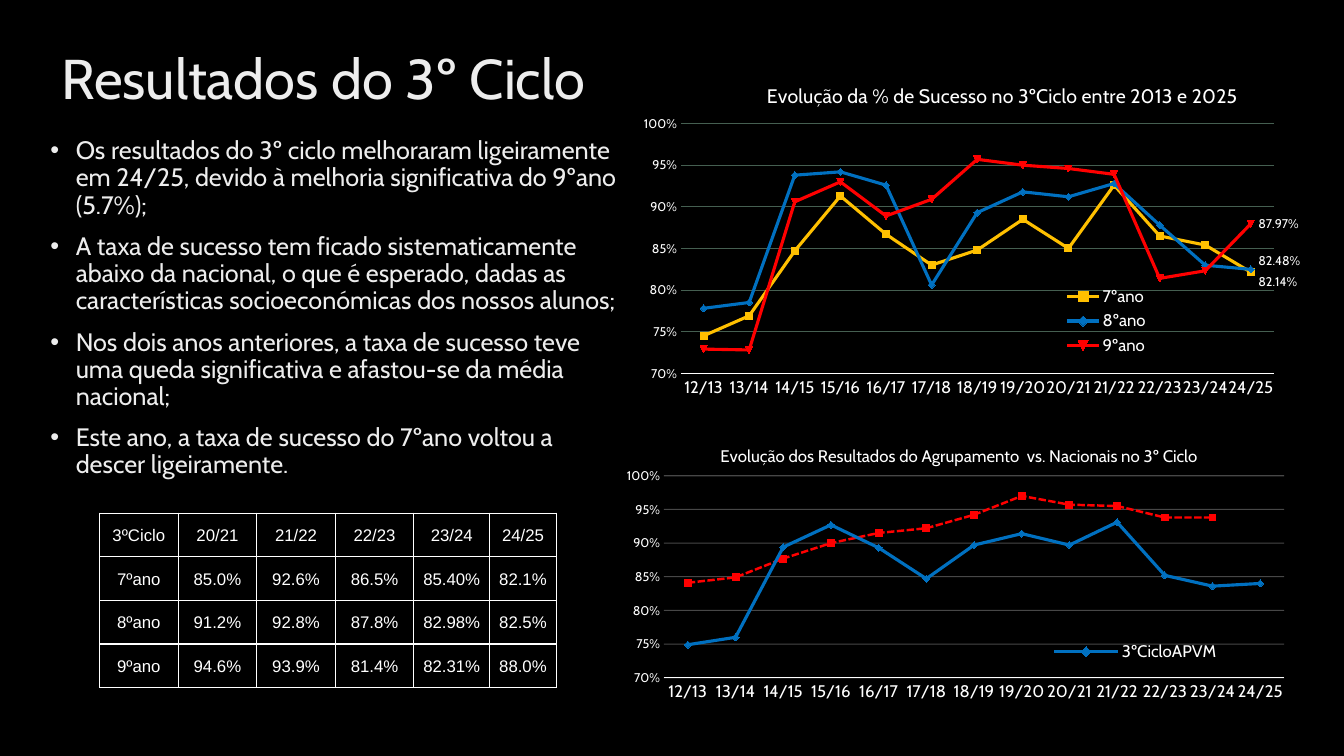
from lxml import etree
from pptx import Presentation
from pptx.chart.data import CategoryChartData
from pptx.dml.color import RGBColor
from pptx.enum.chart import XL_CHART_TYPE, XL_LABEL_POSITION, XL_LEGEND_POSITION, XL_TICK_MARK
from pptx.enum.dml import MSO_LINE
from pptx.enum.text import MSO_ANCHOR, PP_ALIGN
from pptx.oxml import parse_xml
from pptx.oxml.ns import nsdecls, qn
from pptx.util import Cm, Pt

LINE_CHART = XL_CHART_TYPE.LINE
NO_TICK = XL_TICK_MARK.NONE
LABEL_RIGHT = XL_LABEL_POSITION.RIGHT
DASH, SOLID = MSO_LINE.SQUARE_DOT, MSO_LINE.SOLID
MIDDLE, CENTER = MSO_ANCHOR.MIDDLE, PP_ALIGN.CENTER
WHITE, TEXT = "FFFFFF", "EDEDED"
YELLOW, BLUE, RED = "FFC000", "0070C0", "FF0000"
FONT = "Cabin"

# Content
TITLE = "Resultados do 3º Ciclo"
BULLETS = [
    "Os resultados do 3º ciclo melhoraram ligeiramente em 24/25, devido à melhoria "
    "significativa do 9ºano (5.7%);",
    "A taxa de sucesso tem ficado sistematicamente abaixo da nacional, o que é esperado, "
    "dadas as características socioeconómicas dos nossos alunos;",
    "Nos dois anos anteriores, a taxa de sucesso teve uma queda significativa e "
    "afastou-se da média nacional;",
    "Este ano, a taxa de sucesso do 7ºano voltou a descer ligeiramente.",
]
TABLE = [
    ["3ºCiclo", "20/21", "21/22", "22/23", "23/24", "24/25"],
    ["7ºano", "85.0%", "92.6%", "86.5%", "85.40%", "82.1%"],
    ["8ºano", "91.2%", "92.8%", "87.8%", "82.98%", "82.5%"],
    ["9ºano", "94.6%", "93.9%", "81.4%", "82.31%", "88.0%"],
]
COLUMNS = [1.98, 1.98, 1.98, 1.98, 1.91, 1.68]
ROW_HEIGHT = 1.1
YEARS = [f"{y}/{y + 1}" for y in range(12, 25)]

# Series: name, colour, width, dash, vertical shift of the end label (None: no label), values
# Layouts are fractions of the chart: x, y and, where needed, width and height
CHARTS = [
    {
        "box": (15.88, 1.55, 16.89, 8.84),
        "title": "Evolução da % de Sucesso no 3ºCiclo entre 2013 e 2025",
        "title_size": 14, "title_at": (0.2, 0.05),
        "plot": (0.076, 0.177, 0.89, 0.712),
        "legend": (0.64, 0.63, 0.15, 0.22), "hidden_entries": [],
        "grid": ("455F51", 100),
        "series": [
            ("7ºano", YELLOW, 2.25, SOLID, 0.026,
             [0.745, 0.769, 0.847, 0.913, 0.867, 0.83, 0.848, 0.885, 0.85, 0.926, 0.865,
              0.854, 0.8214]),
            ("8ºano", BLUE, 2.25, SOLID, -0.026,
             [0.778, 0.785, 0.938, 0.942, 0.926, 0.806, 0.893, 0.918, 0.912, 0.928, 0.878,
              0.8298, 0.8248]),
            ("9ºano", RED, 2.25, SOLID, 0,
             [0.729, 0.728, 0.906, 0.93, 0.889, 0.909, 0.957, 0.95, 0.946, 0.939, 0.814,
              0.8231, 0.8797]),
        ],
    },
    {
        "box": (15.49, 10.77, 17.27, 7.39),
        "title": "Evolução dos Resultados do Agrupamento  vs. Nacionais no 3º Ciclo",
        "title_size": 12, "title_at": (0.15, 0.05),
        "plot": (0.072, 0.165, 0.905, 0.689),
        "legend": (0.63, 0.72, 0.26, 0.09), "hidden_entries": [0],
        "grid": ("D9D9D9", 33),
        "series": [
            ("3ºCicloNAC", RED, 1.75, DASH, None,
             [0.841, 0.849, 0.877, 0.9, 0.915, 0.922, 0.942, 0.97, 0.957, 0.955, 0.938,
              0.938, None]),
            ("3ºCicloAPVM", BLUE, 2.25, SOLID, None,
             [0.749, 0.76, 0.894, 0.927, 0.893, 0.847, 0.897, 0.914, 0.897, 0.931, 0.852,
              0.836, 0.84]),
        ],
    },
]


def rgb(color):
    return RGBColor.from_string(color)


def set_font(font, size, color=WHITE, name=FONT):
    font.size, font.name, font.bold = Pt(size), name, False
    font.color.rgb = rgb(color)


def set_line(line, color, width):
    line.color.rgb = rgb(color)
    line.width = Pt(width)


def set_layout(parent, index, values, inner=False, edge=True):
    for old in parent.findall(qn("c:layout")):
        parent.remove(old)
    tags = '<c:layoutTarget val="inner"/>' if inner else ""
    if edge:
        tags += '<c:xMode val="edge"/><c:yMode val="edge"/>'
    tags += "".join(f'<c:{k} val="{v}"/>' for k, v in zip("xywh", values))
    parent.insert(index, parse_xml(
        f'<c:layout {nsdecls("c")}><c:manualLayout>{tags}</c:manualLayout></c:layout>'))


def add_text(box, paragraphs, size, bullet=False, anchor=None):
    tf = slide.shapes.add_textbox(*map(Cm, box)).text_frame
    tf.word_wrap = True
    if anchor is not None:
        tf.vertical_anchor = anchor
    for i, text in enumerate(paragraphs):
        p = tf.add_paragraph() if i else tf.paragraphs[0]
        p.text = text
        p.line_spacing = 0.9
        p.space_before = Pt(10 if i else 0)
        if bullet:
            pPr = p._p.get_or_add_pPr()
            pPr.set("marL", str(Cm(0.64)))
            pPr.set("indent", str(-Cm(0.64)))
            etree.SubElement(pPr, qn("a:buFont")).set("typeface", "Arial")
            etree.SubElement(pPr, qn("a:buChar")).set("char", "•")
        set_font(p.runs[0].font, size, TEXT)


def add_line_chart(c):
    data = CategoryChartData(number_format="0.00%")
    data.categories = YEARS
    for name, *_, values in c["series"]:
        data.add_series(name, values)
    chart = slide.shapes.add_chart(LINE_CHART, *map(Cm, c["box"]), data).chart
    set_font(chart.font, 10)
    chart.plots[0].vary_by_categories = False

    # Title, plot area and legend
    tf = chart.chart_title.text_frame
    tf.text = c["title"]
    set_font(tf.paragraphs[0].runs[0].font, c["title_size"])
    chart.has_legend = True
    legend = chart.legend
    legend.position = XL_LEGEND_POSITION.RIGHT
    legend.include_in_layout = False
    set_font(legend.font, 12)
    root = chart._chartSpace
    set_layout(root.xpath(".//c:title")[0], 1, c["title_at"])
    set_layout(root.xpath(".//c:plotArea")[0], 0, c["plot"], inner=True)
    legend_xml = root.xpath(".//c:legend")[0]
    set_layout(legend_xml, 1, c["legend"])
    for i in c["hidden_entries"]:
        legend_xml.insert(1, parse_xml(
            f'<c:legendEntry {nsdecls("c")}><c:idx val="{i}"/><c:delete val="1"/></c:legendEntry>'))

    # Axes
    cat, val = chart.category_axis, chart.value_axis
    for axis, size in ((cat, 12), (val, 9)):
        axis.major_tick_mark = axis.minor_tick_mark = NO_TICK
        set_font(axis.tick_labels.font, size)
    set_line(cat.format.line, WHITE, 0.75)
    val.format.line.fill.background()
    val.minimum_scale, val.maximum_scale, val.major_unit = 0.7, 1, 0.05
    val.tick_labels.number_format = "0%"
    val.tick_labels.number_format_is_linked = False
    color, opacity = c["grid"]
    set_line(val.major_gridlines.format.line, color, 0.75)
    grid_color = root.xpath(".//c:majorGridlines//a:srgbClr")[0]
    etree.SubElement(grid_color, qn("a:alpha")).set("val", str(opacity * 1000))

    # Series and end labels
    for ser, (_, color, width, dash, shift, values) in zip(chart.plots[0].series, c["series"]):
        ser.smooth = False
        ser.marker.style = None
        set_line(ser.format.line, color, width)
        ser.format.line.dash_style = dash
        if shift is not None:
            label = ser.points[len(values) - 1].data_label
            set_font(label.font, 9)
            label.position = LABEL_RIGHT
            dLbl = ser._element.xpath(".//c:dLbl")[0]
            dLbl.insert(1, parse_xml(
                f'<c:numFmt {nsdecls("c")} formatCode="0.00%" sourceLinked="0"/>'))
            if shift:
                set_layout(dLbl, 1, (0, shift), edge=False)


def add_results_table():
    tbl = slide.shapes.add_table(len(TABLE), len(COLUMNS), Cm(2.51), Cm(12.93),
                                 Cm(sum(COLUMNS)), Cm(ROW_HEIGHT * len(TABLE))).table
    tbl.first_row = tbl.horz_banding = False
    for col, width in zip(tbl.columns, COLUMNS):
        col.width = Cm(width)
    for r, row in enumerate(TABLE):
        tbl.rows[r].height = Cm(ROW_HEIGHT)
        for k, text in enumerate(row):
            cell = tbl.cell(r, k)
            cell.text = text
            cell.vertical_anchor = MIDDLE
            cell.margin_left = cell.margin_right = cell.margin_top = Cm(0.03)
            cell.margin_bottom = 0
            for side in "LRTB":
                cell._tc.get_or_add_tcPr().append(parse_xml(
                    f'<a:ln{side} {nsdecls("a")} w="{Pt(1)}"><a:solidFill>'
                    f'<a:srgbClr val="{WHITE}"/></a:solidFill></a:ln{side}>'))
            cell.fill.background()
            p = cell.text_frame.paragraphs[0]
            p.alignment = CENTER
            set_font(p.runs[0].font, 12, name="Arial")


prs = Presentation()
prs.slide_width, prs.slide_height = Cm(33.87), Cm(19.05)
slide = prs.slides.add_slide(prs.slide_layouts[6])
slide.background.fill.solid()
slide.background.fill.fore_color.rgb = rgb("000000")

add_text((1.3, 0.79, 16.79, 2.51), [TITLE], 40, anchor=MIDDLE)
add_text((1.02, 3.35, 14.86, 10.62), BULLETS, 18, bullet=True)
for chart_content in CHARTS:
    add_line_chart(chart_content)
add_results_table()
prs.save("out.pptx")
